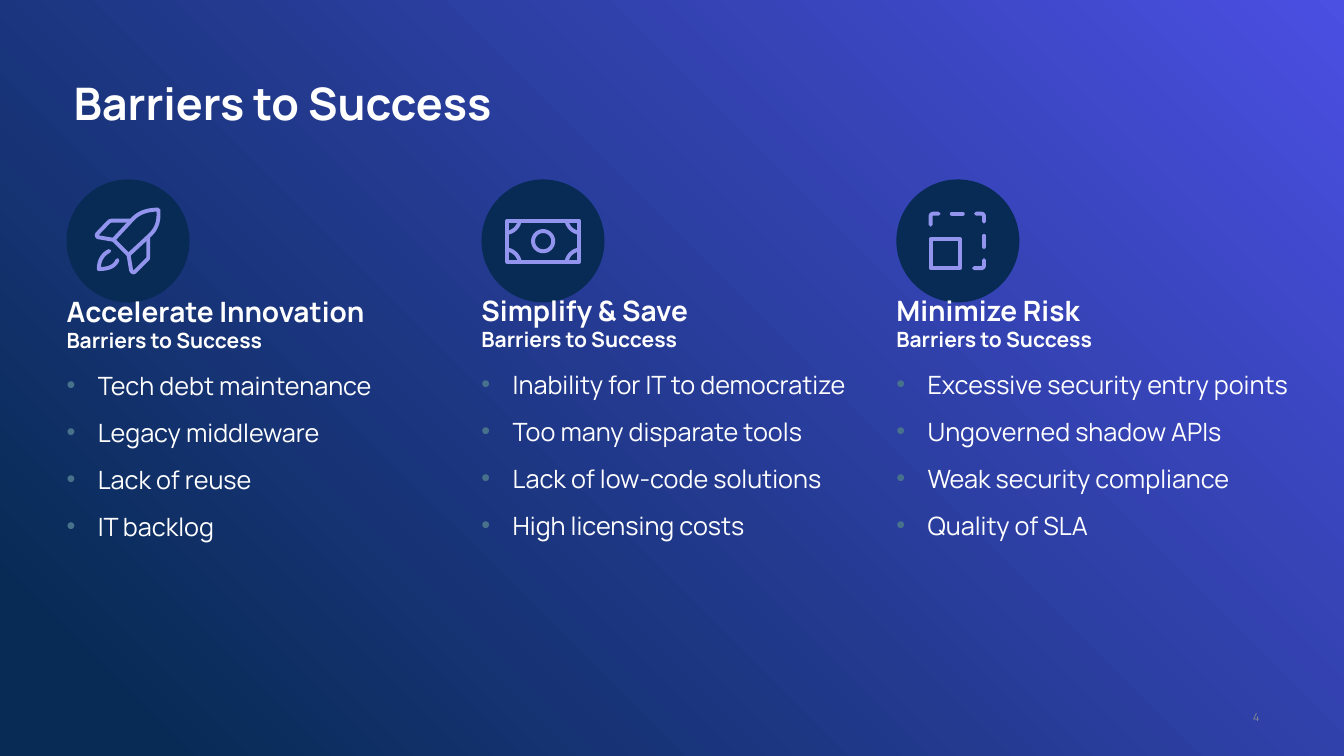
from dataclasses import dataclass

from lxml import etree
from pptx import Presentation
from pptx.dml.color import RGBColor
from pptx.enum.shapes import MSO_SHAPE
from pptx.enum.text import MSO_ANCHOR, MSO_AUTO_SIZE, PP_ALIGN
from pptx.oxml.ns import qn
from pptx.util import Inches, Pt

OVAL = MSO_SHAPE.OVAL
TOP, MIDDLE = MSO_ANCHOR.TOP, MSO_ANCHOR.MIDDLE
LEFT, RIGHT = PP_ALIGN.LEFT, PP_ALIGN.RIGHT
NO_FIT = MSO_AUTO_SIZE.NONE

TITLE = "Barriers to Success"
SUBHEADING = "Barriers to Success"
PAGE_NUMBER = "4"

NOTE_SIZE = 122.5
NOTE_ARC = [(25.5, 53), (32, 52, 37, 47, 38, 41)]


def mirrored(stroke, across, down):
    def flip(point):
        return tuple(NOTE_SIZE - value if (across, down)[i % 2] else value
                     for i, value in enumerate(point))
    return [flip(point) for point in stroke]


ROCKET = [
    [(46.5, 60), (66.5, 38.5), (73, 32, 82, 30, 91, 30),
     (92, 40, 90, 48, 83.5, 54.5), (61.5, 75), (46.5, 60)],
    [(64, 41), (45, 41), (43.5, 41, 42.5, 41.5, 41.5, 42.5), (30.5, 54),
     (29.5, 55, 30, 57.5, 32, 57.5), (46.5, 60)],
    [(61.5, 75), (64, 90), (64.5, 92, 66.5, 93, 68, 91.5), (80, 79.5),
     (81, 78.5, 81, 78, 81, 77), (81, 57)],
    [(42.5, 71), (38, 73, 32, 78, 32, 89), (45, 89, 49, 84, 50.5, 80)],
]
BANKNOTE = [
    [(25.5, 41), (97, 41), (97, 81.5), (25.5, 81.5), (25.5, 41)],
    [(71.25, 61.25), (71.25, 66.75, 66.75, 71.25, 61.25, 71.25),
     (55.75, 71.25, 51.25, 66.75, 51.25, 61.25),
     (51.25, 55.75, 55.75, 51.25, 61.25, 51.25),
     (66.75, 51.25, 71.25, 55.75, 71.25, 61.25)],
] + [mirrored(NOTE_ARC, across, down) for across in (0, 1) for down in (0, 1)]
SCALING = [
    [(34, 59), (63, 59), (63, 88), (34, 88), (34, 59)],
    [(34, 45), (34, 37), (34, 35, 35, 34, 37, 34), (42, 34)],
    [(55, 34), (66, 34)],
    [(79, 34), (84, 34), (86, 34, 87, 35, 87, 37), (87, 42)],
    [(87, 56), (87, 67)],
    [(87, 80), (87, 85), (87, 87, 86, 88, 84, 88), (77, 88)],
]

COLUMNS = [
    {"heading": "Accelerate Innovation", "icon": ROCKET, "top": 2.87, "width": 3.62,
     "barriers": ["Tech debt maintenance", "Legacy middleware", "Lack of reuse",
                  "IT backlog"]},
    {"heading": "Simplify & Save", "icon": BANKNOTE, "top": 2.86, "width": 4.04,
     "barriers": ["Inability for IT to democratize", "Too many disparate tools",
                  "Lack of low-code solutions", "High licensing costs"]},
    {"heading": "Minimize Risk", "icon": SCALING, "top": 2.86, "width": 4.36,
     "barriers": ["Excessive security entry points", "Ungoverned shadow APIs",
                  "Weak security compliance", "Quality of SLA"]},
]
COLUMN_LEFT, COLUMN_STEP = 0.66, 4.115
CIRCLE_TOP, CIRCLE_SIZE = 1.78, 1.22
CURVE_STEPS = 10


@dataclass(frozen=True)
class Theme:
    font: str = "Manrope"
    navy: str = "072B55"
    violet: str = "4B4FE2"
    icon: str = "9294ED"
    text: str = "FFFFFF"
    bullet: str = "48728C"
    number: str = "888B8F"
    title_size: int = 32
    heading_size: int = 20
    subheading_size: int = 15
    body_size: int = 18
    number_size: int = 8
    icon_line: float = 2.8


THEME = Theme()


def color(value):
    return RGBColor.from_string(value)


def place(box, left, top, width, height, anchor=TOP, inset=0):
    box.left, box.top = Inches(left), Inches(top)
    box.width, box.height = Inches(width), Inches(height)
    frame = box.text_frame
    frame.word_wrap = True
    frame.auto_size = NO_FIT
    frame.vertical_anchor = anchor
    frame.margin_left, frame.margin_right = Inches(inset), Inches(0.1)
    frame.margin_top = frame.margin_bottom = Inches(0.05)
    return frame


def write(frame, text, size, first=False, bold=False, fill=THEME.text, align=LEFT,
          before=0, line=1.0, bullet=False):
    para = frame.paragraphs[0] if first else frame.add_paragraph()
    para.alignment, para.line_spacing = align, line
    para.space_before, para.space_after = Pt(before), Pt(0)
    properties = para._p.get_or_add_pPr()
    indent = Inches(0.31) if bullet else 0
    properties.set("marL", str(indent))
    properties.set("indent", str(-indent))
    if bullet:
        tint = etree.SubElement(properties, qn("a:buClr"))
        etree.SubElement(tint, qn("a:srgbClr")).set("val", THEME.bullet)
        etree.SubElement(properties, qn("a:buFont")).set("typeface", "Arial")
        etree.SubElement(properties, qn("a:buChar")).set("char", "•")
    else:
        etree.SubElement(properties, qn("a:buNone"))
    span = para.add_run()
    span.text = text
    span.font.name, span.font.size, span.font.bold = THEME.font, Pt(size), bold
    span.font.color.rgb = color(fill)


def flatten(stroke):
    points = [stroke[0]]
    for target in stroke[1:]:
        if len(target) == 2:
            points.append(target)
            continue
        start = points[-1]
        handles = [start, target[:2], target[2:4], target[4:]]
        for step in range(1, CURVE_STEPS + 1):
            t = step / CURVE_STEPS
            weights = ((1 - t) ** 3, 3 * t * (1 - t) ** 2, 3 * t * t * (1 - t), t ** 3)
            points.append(tuple(sum(w * h[axis] for w, h in zip(weights, handles))
                                for axis in (0, 1)))
    return points


def draw_icon(page, strokes, left):
    builder = None
    for stroke in strokes:
        points = [(Inches(left + x / 100), Inches(CIRCLE_TOP + y / 100))
                  for x, y in flatten(stroke)]
        if builder is None:
            builder = page.shapes.build_freeform(*points[0])
        else:
            builder.move_to(*points[0])
        builder.add_line_segments(points[1:], close=stroke[0] == stroke[-1][-2:])
    icon = builder.convert_to_shape()
    icon.shadow.inherit = False
    icon.fill.background()
    icon.line.color.rgb = color(THEME.icon)
    icon.line.width = Pt(THEME.icon_line)
    outline = icon.line._get_or_add_ln()
    outline.set("cap", "rnd")
    etree.SubElement(outline, qn("a:round"))


def draw_circle(page, left):
    circle = page.shapes.add_shape(OVAL, Inches(left), Inches(CIRCLE_TOP),
                                   Inches(CIRCLE_SIZE), Inches(CIRCLE_SIZE))
    circle.shadow.inherit = False
    circle.fill.solid()
    circle.fill.fore_color.rgb = color(THEME.navy)
    circle.line.fill.background()
    page.shapes._spTree.insert(2, circle._element)


def paint_background(page):
    fill = page.background.fill
    fill.gradient()
    fill.gradient_angle = 45
    for stop, position, value in zip(fill.gradient_stops, (0.08, 1),
                                     (THEME.navy, THEME.violet)):
        stop.position = position
        stop.color.rgb = color(value)


def main():
    deck = Presentation()
    deck.slide_width, deck.slide_height = Inches(13.33), Inches(7.5)
    page = deck.slides.add_slide(deck.slide_layouts.get_by_name("Comparison"))
    paint_background(page)

    title, *bodies = page.placeholders
    write(place(title, 0.73, 0.76, 11.85, 0.53), TITLE, THEME.title_size,
          first=True, bold=True, line=0.9)
    for spare in bodies[len(COLUMNS):]:
        spare._element.getparent().remove(spare._element)

    for index, (body, column) in enumerate(zip(bodies, COLUMNS)):
        left = COLUMN_LEFT + index * COLUMN_STEP
        draw_circle(page, left)
        frame = place(body, left, column["top"], column["width"], 2.79)
        write(frame, column["heading"], THEME.heading_size, first=True, bold=True)
        write(frame, SUBHEADING, THEME.subheading_size, bold=True)
        for barrier in column["barriers"]:
            write(frame, barrier, THEME.body_size, before=12, bullet=True)
        draw_icon(page, column["icon"], left)

    number = page.shapes.add_textbox(0, 0, 0, 0)
    write(place(number, 9.59, 7, 3, 0.23, anchor=MIDDLE, inset=0.1), PAGE_NUMBER,
          THEME.number_size, first=True, fill=THEME.number, align=RIGHT)
    deck.save("out.pptx")


if __name__ == "__main__":
    main()
